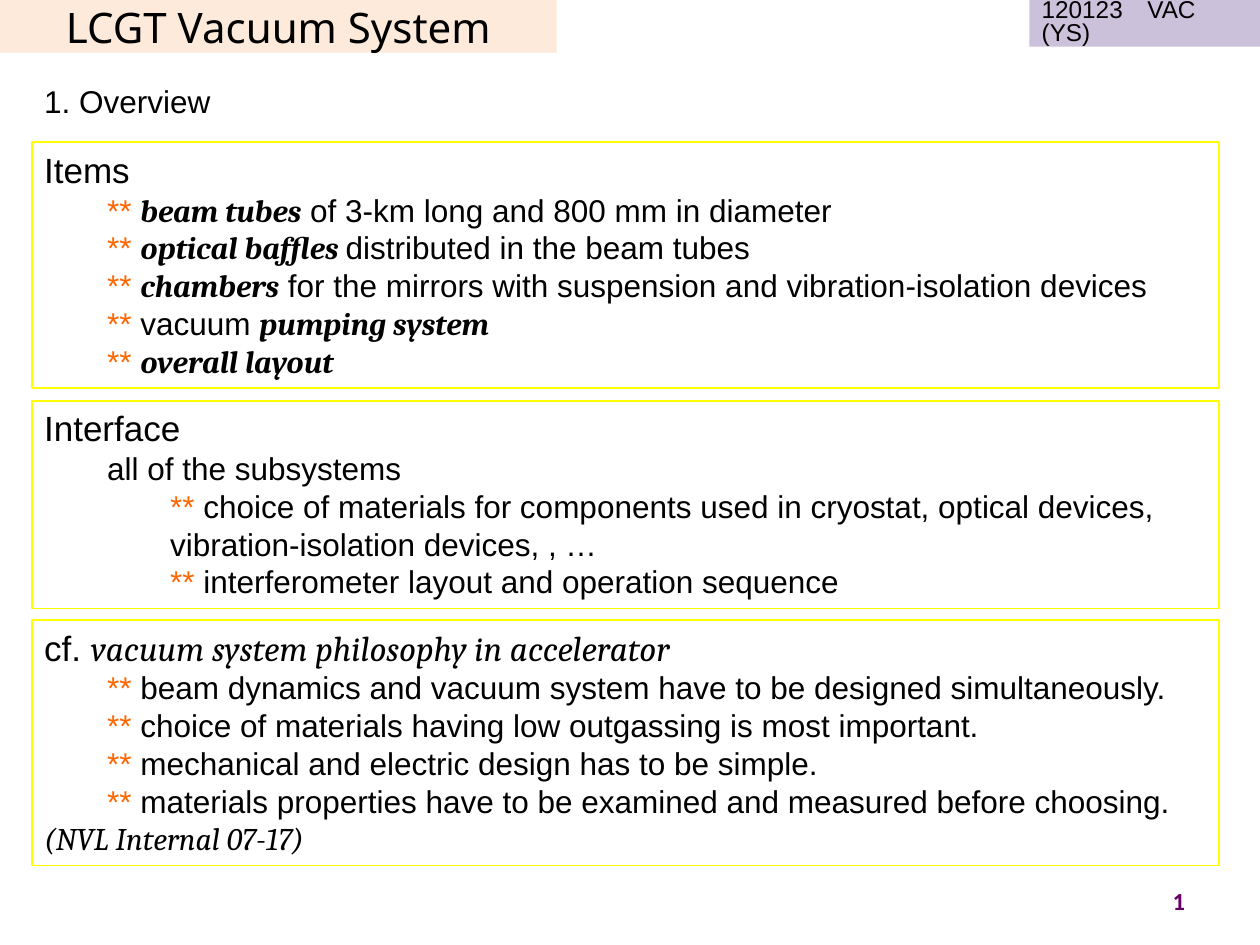
from pptx import Presentation
from pptx.dml.color import RGBColor
from pptx.enum.text import MSO_ANCHOR, MSO_AUTO_SIZE, PP_ALIGN
from pptx.util import Cm, Pt


def color(hex_string):
    return RGBColor.from_string(hex_string)


def set_font(font, name, size, hex_string, bold=False, italic=False):
    font.name = name
    font.size = Pt(size)
    font.bold = bold
    font.italic = italic
    font.color.rgb = color(hex_string)


presentation = Presentation()
presentation.slide_width = Cm(25.4)
presentation.slide_height = Cm(19.05)
slide = presentation.slides.add_slide(presentation.slide_layouts[5])

# Title
title = slide.shapes.title
title.left, title.top, title.width, title.height = Cm(0), Cm(0), Cm(11.22), Cm(1.06)
title.fill.solid()
title.fill.fore_color.rgb = color("FDEADA")
title.text_frame.text = "LCGT Vacuum System"
title.text_frame.auto_size = MSO_AUTO_SIZE.NONE
title.text_frame.vertical_anchor = MSO_ANCHOR.MIDDLE
heading = title.text_frame.paragraphs[0]
heading.alignment = PP_ALIGN.CENTER
set_font(heading.font, "Noto Sans", 24, "000000")

# Framed sections: (top, height, lines); a line is (level, size, runs)
STYLES = {
    "plain": ("Arial", "000000", False, False),
    "mark": ("Arial", "FF6600", False, False),
    "term": ("Cambria", "000000", True, True),
    "quote": ("Cambria", "000000", False, True),
}
MARK = ("** ", "mark")
sections = [
    (2.87, 4.95, [
        (0, 20, [("Items", "plain")]),
        (1, 18, [MARK, ("beam tubes", "term"),
                 (" of 3-km long and 800 mm in diameter", "plain")]),
        (1, 18, [MARK, ("optical baffles ", "term"),
                 ("distributed in the beam tubes", "plain")]),
        (1, 18, [MARK, ("chambers", "term"),
                 (" for the mirrors with suspension and vibration-isolation devices", "plain")]),
        (1, 18, [MARK, ("vacuum ", "plain"), ("pumping system", "term")]),
        (1, 18, [MARK, ("overall layout", "term")]),
    ]),
    (8.08, 4.19, [
        (0, 20, [("Interface", "plain")]),
        (1, 18, [("all of the subsystems", "plain")]),
        (2, 18, [MARK, ("choice of materials for components used in cryostat, "
                        "optical devices, vibration-isolation devices, , …", "plain")]),
        (2, 18, [MARK, ("interferometer layout and operation sequence", "plain")]),
    ]),
    (12.5, 4.95, [
        (0, 20, [("cf. ", "plain"), ("vacuum system philosophy in accelerator", "quote")]),
        (1, 18, [MARK, ("beam dynamics and vacuum system have to be designed "
                        "simultaneously.", "plain")]),
        (1, 18, [MARK, ("choice of materials having low outgassing is most important.", "plain")]),
        (1, 18, [MARK, ("mechanical and electric design has to be simple.", "plain")]),
        (1, 18, [MARK, ("materials properties have to be examined and measured "
                        "before choosing.", "plain")]),
        (0, 18, [("(NVL Internal 07-17)", "quote")]),
    ]),
]
for top, height, lines in sections:
    section = slide.shapes.add_textbox(Cm(0.64), Cm(top), Cm(23.93), Cm(height))
    section.line.color.rgb = color("FFFF00")
    section.line.width = Pt(1)
    body = section.text_frame
    body.word_wrap = True
    body.auto_size = MSO_AUTO_SIZE.SHAPE_TO_FIT_TEXT
    for index, (level, size, runs) in enumerate(lines):
        line = body.add_paragraph() if index else body.paragraphs[0]
        line.level = level
        # Each level is indented by half an inch
        indent = line._p.get_or_add_pPr()
        indent.set("marL", str(Cm(1.27) * level))
        indent.set("indent", "0")
        for text, style in runs:
            run = line.add_run()
            run.text = text
            name, ink, bold, italic = STYLES[style]
            set_font(run.font, name, size, ink, bold, italic)

# Date tag, page number and section heading
labels = [
    ("120123　VAC (YS)", (20.75, 0, 4.65, 0.94), "Arial", 13.9, "000000", False,
     PP_ALIGN.LEFT, MSO_ANCHOR.MIDDLE, True),
    ("1", (18.21, 17.65, 5.93, 1.02), "Calibri", 14, "660066", True,
     PP_ALIGN.RIGHT, MSO_ANCHOR.MIDDLE, True),
    ("1. Overview", (0.64, 1.52, 3.94, 1.02), "Arial", 18, "000000", False,
     PP_ALIGN.LEFT, MSO_ANCHOR.TOP, False),
]
for text, place, name, size, ink, bold, alignment, anchor, wrap in labels:
    label = slide.shapes.add_textbox(*(Cm(length) for length in place))
    label.text_frame.text = text
    label.text_frame.word_wrap = wrap
    label.text_frame.vertical_anchor = anchor
    label_line = label.text_frame.paragraphs[0]
    label_line.alignment = alignment
    set_font(label_line.font, name, size, ink, bold)
    if text.startswith("120123"):
        label.fill.solid()
        label.fill.fore_color.rgb = color("CCC1DA")
        label_line.line_spacing = 0.8
        label_line.space_before = Pt(2.8)

presentation.save("out.pptx")
